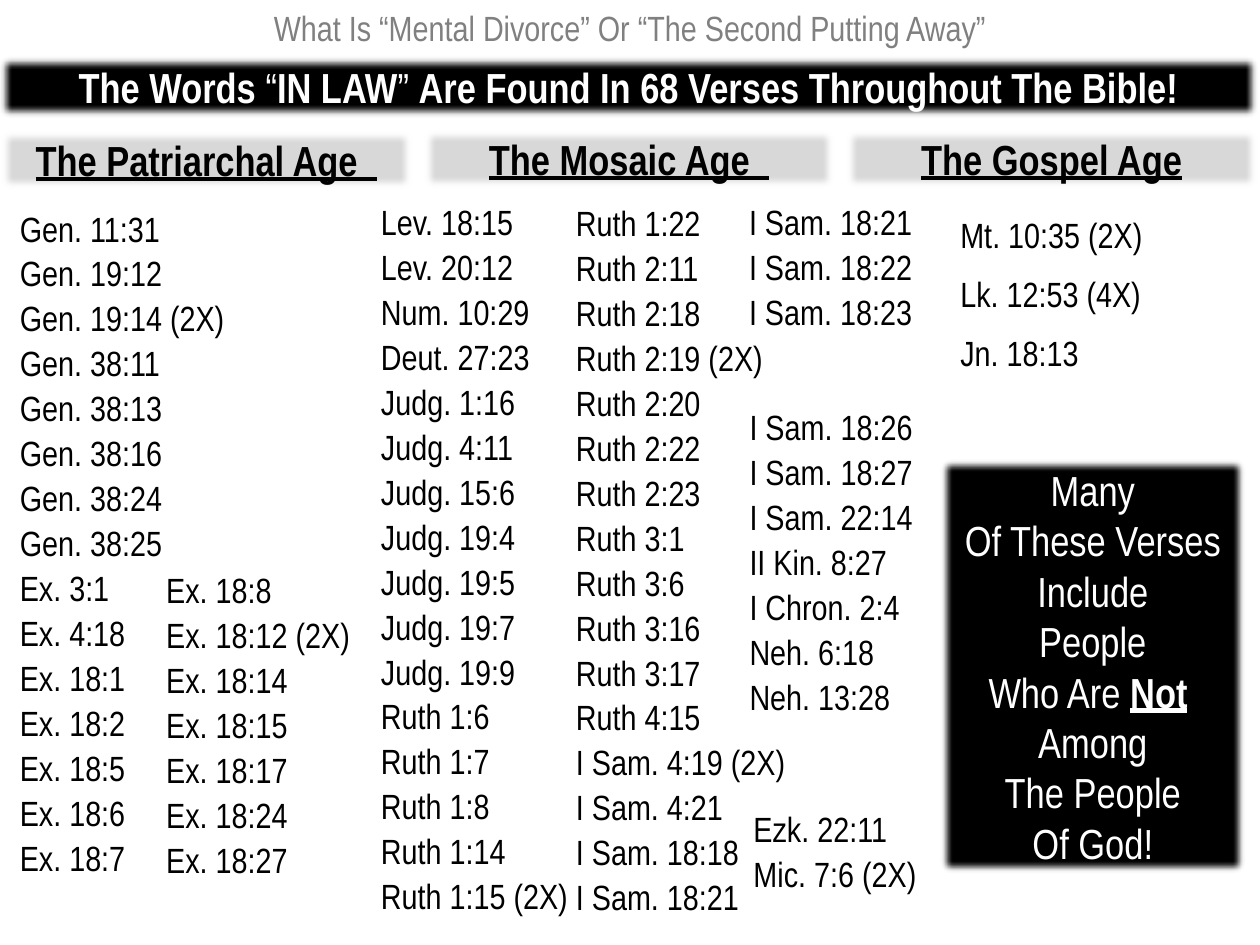
from lxml.etree import SubElement
from pptx import Presentation
from pptx.dml.color import RGBColor as Color
from pptx.enum.shapes import MSO_SHAPE as Preset
from pptx.enum.text import MSO_ANCHOR as Anchor, MSO_AUTO_SIZE as AutoSize, PP_ALIGN as Align
from pptx.oxml.ns import qn
from pptx.util import Cm, Pt

TITLE = "What Is “Mental Divorce” Or “The Second Putting Away”"
BANNER = [("The Words ", "bold"), ("“", "plain"), ("IN LAW", "bold"), ("” ", "plain"),
          ("Are Found In 68 Verses Throughout The Bible!", "bold")]
AGES = [("The Patriarchal Age  ", 2.59), ("The Mosaic Age  ", 2.57), ("The Gospel Age", 2.57)]
GOSPEL_VERSES = ["Mt. 10:35 (2X)", "Lk. 12:53 (4X)", "Jn. 18:13"]
VERSE_LISTS = [
    ((0.15, 3.99, 4.98, 13.92),
     ["Gen. 11:31", "Gen. 19:12", "Gen. 19:14 (2X)", "Gen. 38:11", "Gen. 38:13",
      "Gen. 38:16", "Gen. 38:24", "Gen. 38:25", "Ex. 3:1", "Ex. 4:18", "Ex. 18:1",
      "Ex. 18:2", "Ex. 18:5", "Ex. 18:6", "Ex. 18:7"]),
    ((3.1, 11.28, 4.42, 6.6),
     ["Ex. 18:8", "Ex. 18:12 (2X)", "Ex. 18:14", "Ex. 18:15", "Ex. 18:17", "Ex. 18:24",
      "Ex. 18:27"]),
    ((7.43, 3.86, 4.42, 14.83),
     ["Lev. 18:15", "Lev. 20:12", "Num. 10:29", "Deut. 27:23", "Judg. 1:16", "Judg. 4:11",
      "Judg. 15:6", "Judg. 19:4", "Judg. 19:5", "Judg. 19:7", "Judg. 19:9", "Ruth 1:6",
      "Ruth 1:7", "Ruth 1:8", "Ruth 1:14", "Ruth 1:15 (2X)"]),
    ((11.36, 3.88, 4.85, 14.83),
     ["Ruth 1:22", "Ruth 2:11", "Ruth 2:18", "Ruth 2:19 (2X)", "Ruth 2:20", "Ruth 2:22",
      "Ruth 2:23", "Ruth 3:1", "Ruth 3:6", "Ruth 3:16", "Ruth 3:17", "Ruth 4:15",
      "I Sam. 4:19 (2X)", "I Sam. 4:21", "I Sam. 18:18", "I Sam. 18:21"]),
    ((14.85, 3.86, 4.06, 2.92), ["I Sam. 18:21", "I Sam. 18:22", "I Sam. 18:23"]),
    ((14.86, 8, 4.06, 6.58),
     ["I Sam. 18:26", "I Sam. 18:27", "I Sam. 22:14", "II Kin. 8:27", "I Chron. 2:4",
      "Neh. 6:18", "Neh. 13:28"]),
    ((14.94, 16.1, 4.06, 2.01), ["Ezk. 22:11", "Mic. 7:6 (2X)"]),
]
CALLOUT = [("Many\nOf These Verses\nInclude\nPeople\nWho Are ", "plain"), ("Not", "heading"),
           (" \nAmong\nThe People\nOf God!", "plain")]

THEME = {
    "font": "Arial Narrow",
    "black": Color(0, 0, 0),
    "white": Color(255, 255, 255),
    "band": Color(217, 217, 217),
    "title": Color(128, 128, 128),
    "body_size": Pt(20),
    "head_size": Pt(24),
    "soft_edge": Cm(0.16),
}
STYLES = {
    "plain": {"bold": False, "underline": False},
    "bold": {"bold": True, "underline": False},
    "heading": {"bold": True, "underline": True},
}
CENTERED = {"alignment": Align.CENTER}
VERSE_SPACING = {"line_spacing": 1.07, "space_after": Pt(8)}
AGE_LEFT, AGE_STEP, AGE_WIDTH, BAND_HEIGHT = -0.03, 8.52, 8.38, 1.27


def apply(target, formats):
    for name, value in formats.items():
        setattr(target, name, value)


def write(shape, paragraphs, size, color, layout, anchor=Anchor.TOP):
    frame = shape.text_frame
    apply(frame, {"word_wrap": True, "auto_size": AutoSize.SHAPE_TO_FIT_TEXT,
                  "vertical_anchor": anchor})
    for number, segments in enumerate(paragraphs):
        paragraph = frame.add_paragraph() if number else frame.paragraphs[0]
        apply(paragraph, layout)
        for text, style in segments:
            for row, line in enumerate(text.split("\n")):
                if row:
                    paragraph.add_line_break()
                run = paragraph.add_run()
                run.text = line
                apply(run.font, {"name": THEME["font"], "size": size, **STYLES[style]})
                run.font.color.rgb = color


def add_text(slide, place, paragraphs, color, layout):
    shape = slide.shapes.add_textbox(*map(Cm, place))
    write(shape, paragraphs, THEME["body_size"], color, layout)


def add_band(slide, place, segments, fill, color):
    shape = slide.shapes.add_shape(Preset.RECTANGLE, *map(Cm, place))
    shape.fill.solid()
    shape.fill.fore_color.rgb = fill
    shape.line.fill.background()
    shape.shadow.inherit = False
    effects = shape._element.spPr.find(qn("a:effectLst"))
    SubElement(effects, qn("a:softEdge"), rad=str(int(THEME["soft_edge"])))
    write(shape, [segments], THEME["head_size"], color, CENTERED, Anchor.MIDDLE)


def main():
    presentation = Presentation()
    apply(presentation, {"slide_width": Cm(25.4), "slide_height": Cm(19.05)})
    slide = presentation.slides.add_slide(presentation.slide_layouts[6])
    black, white = THEME["black"], THEME["white"]

    add_band(slide, (-0.03, 1.12, 25.4, BAND_HEIGHT), BANNER, black, white)
    for column, (age, top) in enumerate(AGES):
        place = (AGE_LEFT + column * AGE_STEP, top, AGE_WIDTH, BAND_HEIGHT)
        add_band(slide, place, [(age, "heading")], THEME["band"], black)
    for place, verses in VERSE_LISTS:
        add_text(slide, place, [[("\n".join(verses), "plain")]], black, VERSE_SPACING)
    add_text(slide, (19.11, 4.13, 4.42, 3.51),
             [[(verse, "plain")] for verse in GOSPEL_VERSES], black, VERSE_SPACING)
    add_band(slide, (18.9, 9.2, 6.26, 8.46), CALLOUT, black, white)
    add_text(slide, (0, 0, 25.4, 1.12), [[(TITLE, "plain")]], THEME["title"], CENTERED)
    presentation.save("out.pptx")


if __name__ == "__main__":
    main()
